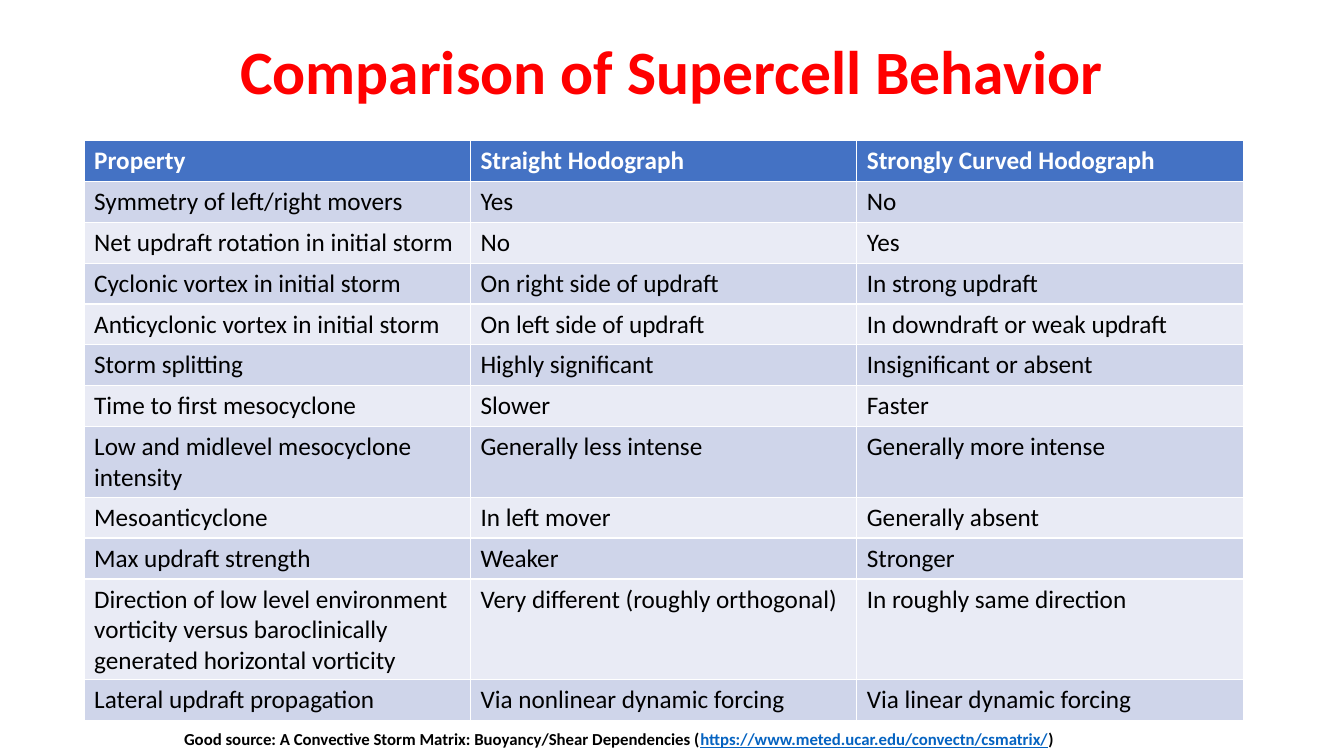
import dataclasses

import pptx
import pptx.dml.color
import pptx.enum.text
import pptx.text.text
import pptx.util

Cm = pptx.util.Cm
Pt = pptx.util.Pt
RGBColor = pptx.dml.color.RGBColor

RED = RGBColor(0xFF, 0x00, 0x00)
BLACK = RGBColor(0x00, 0x00, 0x00)
WHITE = RGBColor(0xFF, 0xFF, 0xFF)
LINK_BLUE = RGBColor(0x05, 0x63, 0xC1)
HEADER_BLUE = RGBColor(0x44, 0x72, 0xC4)
DARK_BAND = RGBColor(0xCF, 0xD5, 0xEA)
LIGHT_BAND = RGBColor(0xE9, 0xEB, 0xF5)
FONT = "Calibri"


@dataclasses.dataclass
class Comparison:
    behavior: str
    straight: str
    curved: str


HEADER = Comparison("Property", "Straight Hodograph", "Strongly Curved Hodograph")
COMPARISONS = [
    Comparison("Symmetry of left/right movers", "Yes", "No"),
    Comparison("Net updraft rotation in initial storm", "No", "Yes"),
    Comparison("Cyclonic vortex in initial storm", "On right side of updraft", "In strong updraft"),
    Comparison("Anticyclonic vortex in initial storm", "On left side of updraft",
               "In downdraft or weak updraft"),
    Comparison("Storm splitting", "Highly significant", "Insignificant or absent"),
    Comparison("Time to first mesocyclone", "Slower", "Faster"),
    Comparison("Low and midlevel mesocyclone intensity", "Generally less intense",
               "Generally more intense"),
    Comparison("Mesoanticyclone", "In left mover", "Generally absent"),
    Comparison("Max updraft strength", "Weaker", "Stronger"),
    Comparison("Direction of low level environment vorticity versus baroclinically "
               "generated horizontal vorticity",
               "Very different (roughly orthogonal)", "In roughly same direction"),
    Comparison("Lateral updraft propagation", "Via nonlinear dynamic forcing",
               "Via linear dynamic forcing"),
]


def set_font(para: pptx.text.text._Paragraph, size: float, color: RGBColor, bold: bool) -> None:
    para.font.name = FONT
    para.font.size = Pt(size)
    para.font.bold = bold
    para.font.color.rgb = color


def add_title(page: pptx.slide.Slide) -> None:
    box = page.shapes.add_textbox(Cm(2.33), Cm(0.03), Cm(29.21), Cm(3.68))
    box.text_frame.word_wrap = True
    box.text_frame.vertical_anchor = pptx.enum.text.MSO_ANCHOR.MIDDLE
    para = box.text_frame.paragraphs[0]
    para.text = "Comparison of Supercell Behavior"
    para.alignment = pptx.enum.text.PP_ALIGN.CENTER
    para.line_spacing = 0.9
    set_font(para, 44, RED, True)


def add_comparison_table(page: pptx.slide.Slide) -> None:
    rows = [HEADER, *COMPARISONS]
    row_height = Cm(1.03)
    table = page.shapes.add_table(len(rows), 3, Cm(2.12), Cm(3.54), Cm(29.21),
                                  row_height * len(rows)).table
    for row_index, comparison in enumerate(rows):
        is_header = row_index == 0
        band = DARK_BAND if row_index % 2 else LIGHT_BAND
        for column_index, text in enumerate(dataclasses.astuple(comparison)):
            cell = table.cell(row_index, column_index)
            cell.fill.solid()
            cell.fill.fore_color.rgb = HEADER_BLUE if is_header else band
            cell.text = text
            set_font(cell.text_frame.paragraphs[0], 18, WHITE if is_header else BLACK, is_header)


def add_source_line(page: pptx.slide.Slide) -> None:
    box = page.shapes.add_textbox(Cm(4.39), Cm(18.24), Cm(22.66), Cm(0.8))
    box.text_frame.word_wrap = True
    para = box.text_frame.paragraphs[0]
    for text, is_address in (
        ("Good source: A Convective Storm Matrix: Buoyancy/Shear Dependencies (", False),
        ("https://www.meted.ucar.edu/convectn/csmatrix/", True),
        (")", False),
    ):
        span = para.add_run()
        span.text = text
        if is_address:
            span.font.color.rgb = LINK_BLUE
            span.font.underline = True
    set_font(para, 12, BLACK, True)


def main() -> None:
    deck = pptx.Presentation()
    deck.slide_width = Cm(33.87)
    deck.slide_height = Cm(19.05)
    page = deck.slides.add_slide(deck.slide_layouts[6])

    # Title, table and source, from top to bottom
    add_title(page)
    add_comparison_table(page)
    add_source_line(page)

    deck.save("out.pptx")


if __name__ == "__main__":
    main()
